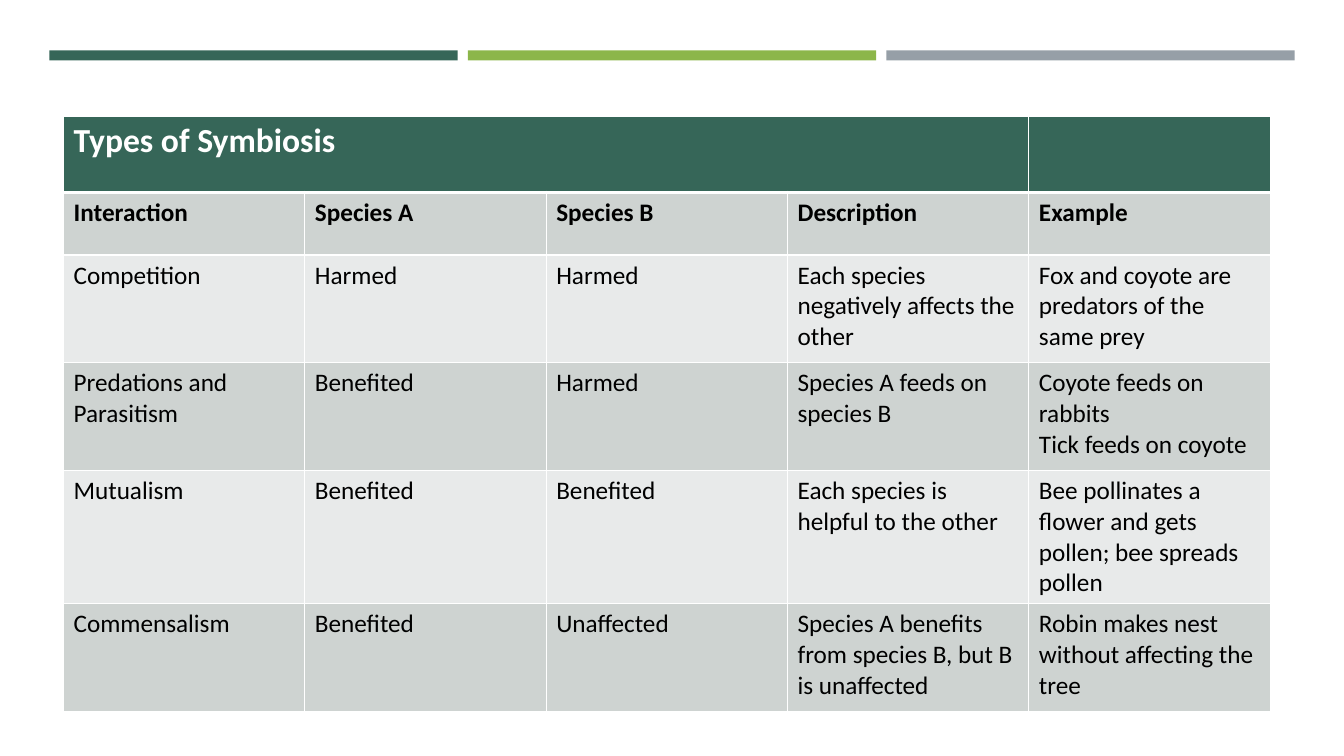
from lxml.etree import SubElement
from pptx import Presentation
from pptx.dml.color import RGBColor
from pptx.enum.shapes import MSO_SHAPE
from pptx.oxml.ns import qn
from pptx.util import Inches, Pt

COLORS = {
    "green": "366658",
    "lime": "8CB64A",
    "gray": "969FA7",
    "dark_band": "CED3D1",
    "light_band": "E8EAEA",
    "white": "FFFFFF",
    "black": "000000",
}
ROWS = [
    ["Types of Symbiosis", "", "", "", ""],
    ["Interaction", "Species A", "Species B", "Description", "Example"],
    ["Competition", "Harmed", "Harmed",
     "Each species negatively affects the other",
     "Fox and coyote are predators of the same prey"],
    ["Predations and Parasitism", "Benefited", "Harmed",
     "Species A feeds on species B",
     "Coyote feeds on rabbits\nTick feeds on coyote"],
    ["Mutualism", "Benefited", "Benefited",
     "Each species is helpful to the other",
     "Bee pollinates a flower and gets pollen; bee spreads pollen"],
    ["Commensalism", "Benefited", "Unaffected",
     "Species A benefits from species B, but B is unaffected",
     "Robin makes nest without affecting the tree"],
]
ROW_HEIGHTS = [0.76, 0.62, 1.07, 1.07, 1.07, 1.07]
TABLE_WIDTH = 11.97


def add_borders(cell, bottom_width):
    properties = cell._tc.get_or_add_tcPr()
    for position, side in enumerate(["lnL", "lnR", "lnT", "lnB"]):
        width = bottom_width if side == "lnB" else 1
        line = SubElement(properties, qn(f"a:{side}"), w=str(Pt(width)))
        fill = SubElement(line, qn("a:solidFill"))
        SubElement(fill, qn("a:srgbClr"), val=COLORS["white"])
        properties.insert(position, line)


deck = Presentation()
deck.slide_width = Inches(13.33)
deck.slide_height = Inches(7.5)
page = deck.slides.add_slide(deck.slide_layouts[6])

for index, color in enumerate(["green", "lime", "gray"]):
    bar = page.shapes.add_shape(
        MSO_SHAPE.RECTANGLE,
        Inches(0.49 + 4.15 * index), Inches(0.5), Inches(4.05), Inches(0.1))
    bar.shadow.inherit = False
    bar.fill.solid()
    bar.fill.fore_color.rgb = RGBColor.from_string(COLORS[color])
    bar.line.fill.background()

table = page.shapes.add_table(
    len(ROWS), len(ROWS[0]), Inches(0.63), Inches(1.15),
    Inches(TABLE_WIDTH), Inches(sum(ROW_HEIGHTS))).table
for column in table.columns:
    column.width = Inches(TABLE_WIDTH / len(ROWS[0]))
table.cell(0, 0).merge(table.cell(0, 3))

for row_index, texts in enumerate(ROWS):
    table.rows[row_index].height = Inches(ROW_HEIGHTS[row_index])
    is_title = row_index == 0
    band = "green" if is_title else "dark_band" if row_index % 2 else "light_band"
    for column_index, text in enumerate(texts):
        cell = table.cell(row_index, column_index)
        cell.fill.solid()
        cell.fill.fore_color.rgb = RGBColor.from_string(COLORS[band])
        add_borders(cell, 3 if is_title else 1)
        if not text:
            continue
        for line_index, line_text in enumerate(text.split("\n")):
            frame = cell.text_frame
            para = frame.add_paragraph() if line_index else frame.paragraphs[0]
            span = para.add_run()
            span.text = line_text
            span.font.name = "Calibri"
            span.font.size = Pt(24 if is_title else 18)
            span.font.bold = row_index < 2
            span.font.color.rgb = RGBColor.from_string(
                COLORS["white" if is_title else "black"])

deck.save("out.pptx")
